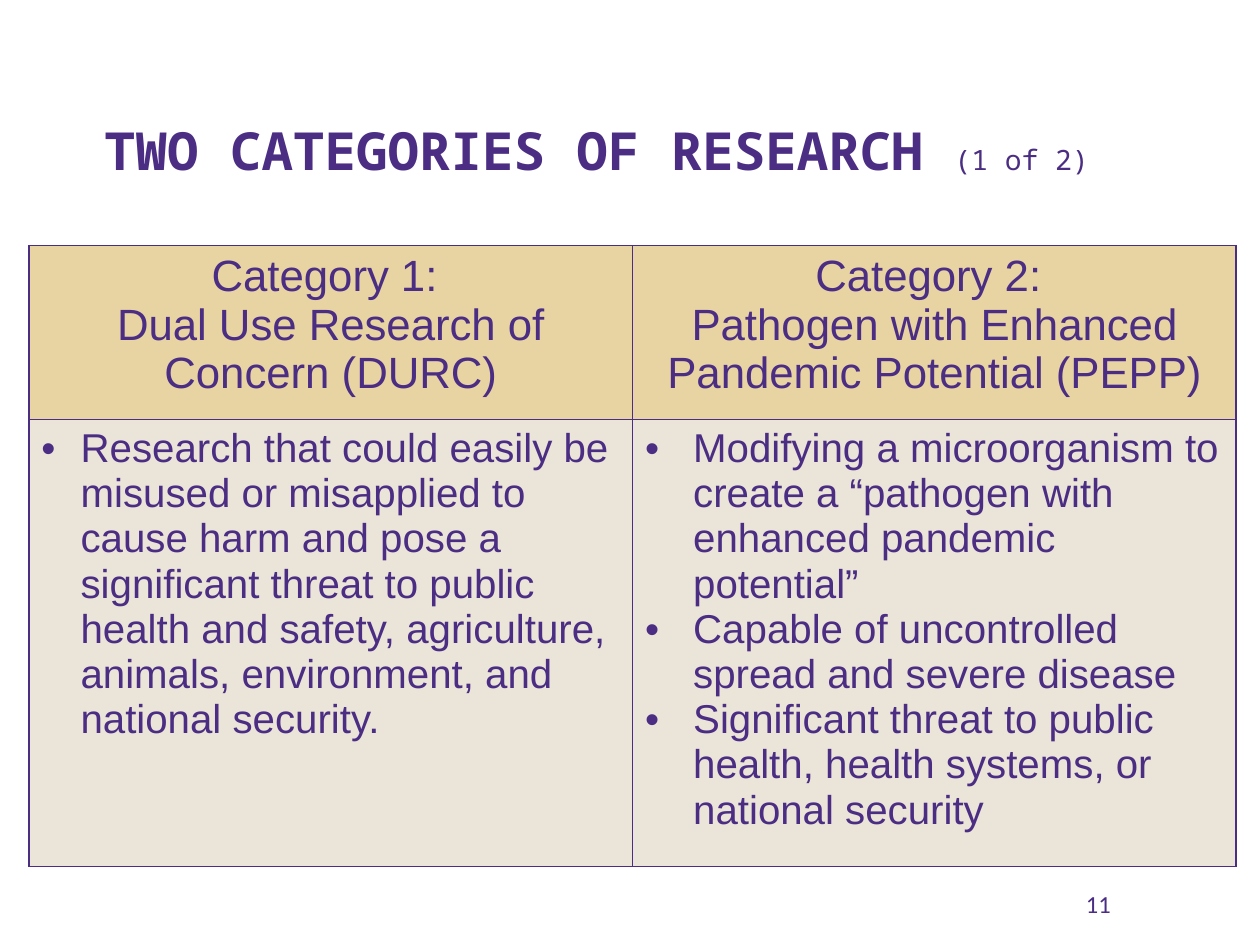
import pptx
import pptx.dml.color
import pptx.enum.text
import pptx.oxml.ns
import pptx.util
from lxml import etree

Cm = pptx.util.Cm
ALIGN = pptx.enum.text.PP_ALIGN
ANCHOR = pptx.enum.text.MSO_ANCHOR

TITLE = [("TWO CATEGORIES OF RESEARCH ", "title"), ("(1 of 2)", "count")]
PAGE_NUMBER = [("11", "number")]
CATEGORIES = [
    {
        "heading": ["Category 1: ", "Dual Use Research of Concern (DURC)"],
        "indent": Cm(0.79),
        "points": [
            "Research that could easily be misused or misapplied to cause harm and pose a "
            "significant threat to public health and safety, agriculture, animals, "
            "environment, and national security.",
        ],
    },
    {
        "heading": ["Category 2: ", "Pathogen with Enhanced Pandemic Potential (PEPP)"],
        "indent": Cm(0.97),
        "points": [
            "Modifying a microorganism to create a “pathogen with enhanced pandemic potential”",
            "Capable of uncontrolled spread and severe disease",
            "Significant threat to public health, health systems, or national security",
        ],
    },
]

THEME = {
    "ink": "4B2E83",
    "heading_fill": "E8D3A2",
    "points_fill": "EBE4D8",
    "border": pptx.util.Pt(1),
    "title": {"name": "Noto Sans Mono", "size": pptx.util.Pt(30), "bold": True},
    "count": {"name": "Noto Sans Mono", "size": pptx.util.Pt(16), "bold": False},
    "heading": {"name": "Arial", "size": pptx.util.Pt(25), "bold": False},
    "points": {"name": "Arial", "size": pptx.util.Pt(23), "bold": False},
    "number": {"name": "Calibri", "size": pptx.util.Pt(14), "bold": False},
}

TABLE_LEFT, TABLE_TOP = Cm(0.58), Cm(4.95)
COLUMN_WIDTH = Cm(12.17)
ROW_HEIGHTS = [Cm(3.51), Cm(8.23)]


def add_element(parent, tag, **attributes):
    return etree.SubElement(parent, pptx.oxml.ns.qn(tag), attributes)


def add_ink(parent):
    add_element(parent, "a:srgbClr", val=THEME["ink"])


def set_values(target, values):
    for name, value in values.items():
        setattr(target, name, value)


def add_span(para, text, style):
    span = para.add_run()
    span.text = text
    set_values(span.font, THEME[style])
    span.font.color.rgb = pptx.dml.color.RGBColor.from_string(THEME["ink"])


def add_box(page, left, top, width, height, spans, frame_format):
    box = page.shapes.add_textbox(left, top, width, height)
    set_values(box.text_frame, frame_format)
    for text, style in spans:
        add_span(box.text_frame.paragraphs[0], text, style)


def add_bullet(para, indent):
    properties = para._p.get_or_add_pPr()
    properties.set("marL", str(indent))
    properties.set("indent", str(-indent))
    add_ink(add_element(properties, "a:buClr"))
    add_element(properties, "a:buFont", typeface="Arial")
    add_element(properties, "a:buChar", char="•")


def style_cell(cell, fill):
    properties = cell._tc.get_or_add_tcPr()
    for side in ("a:lnL", "a:lnR", "a:lnT", "a:lnB"):
        line = add_element(properties, side, w=str(THEME["border"]))
        add_ink(add_element(line, "a:solidFill"))
    cell.fill.solid()
    cell.fill.fore_color.rgb = pptx.dml.color.RGBColor.from_string(fill)


def fill_cell(cell, category, part):
    style_cell(cell, THEME[part + "_fill"])
    frame = cell.text_frame
    for index, text in enumerate(category[part]):
        para = frame.add_paragraph() if index else frame.paragraphs[0]
        if part == "heading":
            para.alignment = ALIGN.CENTER
        else:
            add_bullet(para, category["indent"])
        add_span(para, text, part)


def add_categories(page):
    table = page.shapes.add_table(
        len(ROW_HEIGHTS), len(CATEGORIES), TABLE_LEFT, TABLE_TOP,
        COLUMN_WIDTH * len(CATEGORIES), sum(ROW_HEIGHTS),
    ).table
    set_values(table, {"first_row": False, "horz_banding": False})
    for row, height in zip(table.rows, ROW_HEIGHTS):
        row.height = height
    for column, category in enumerate(CATEGORIES):
        table.columns[column].width = COLUMN_WIDTH
        for row, part in enumerate(("heading", "points")):
            fill_cell(table.cell(row, column), category, part)


def main():
    deck = pptx.Presentation()
    set_values(deck, {"slide_width": Cm(25.4), "slide_height": Cm(19.05)})
    page = deck.slides.add_slide(deck.slide_layouts[6])
    add_box(page, Cm(21.64), Cm(17.8), Cm(1.1), Cm(0.86), PAGE_NUMBER, {"word_wrap": False})
    add_box(page, Cm(1.85), Cm(1.04), Cm(22.73), Cm(2.74), TITLE,
            {"word_wrap": True, "vertical_anchor": ANCHOR.BOTTOM})
    add_categories(page)
    deck.save("out.pptx")


if __name__ == "__main__":
    main()
